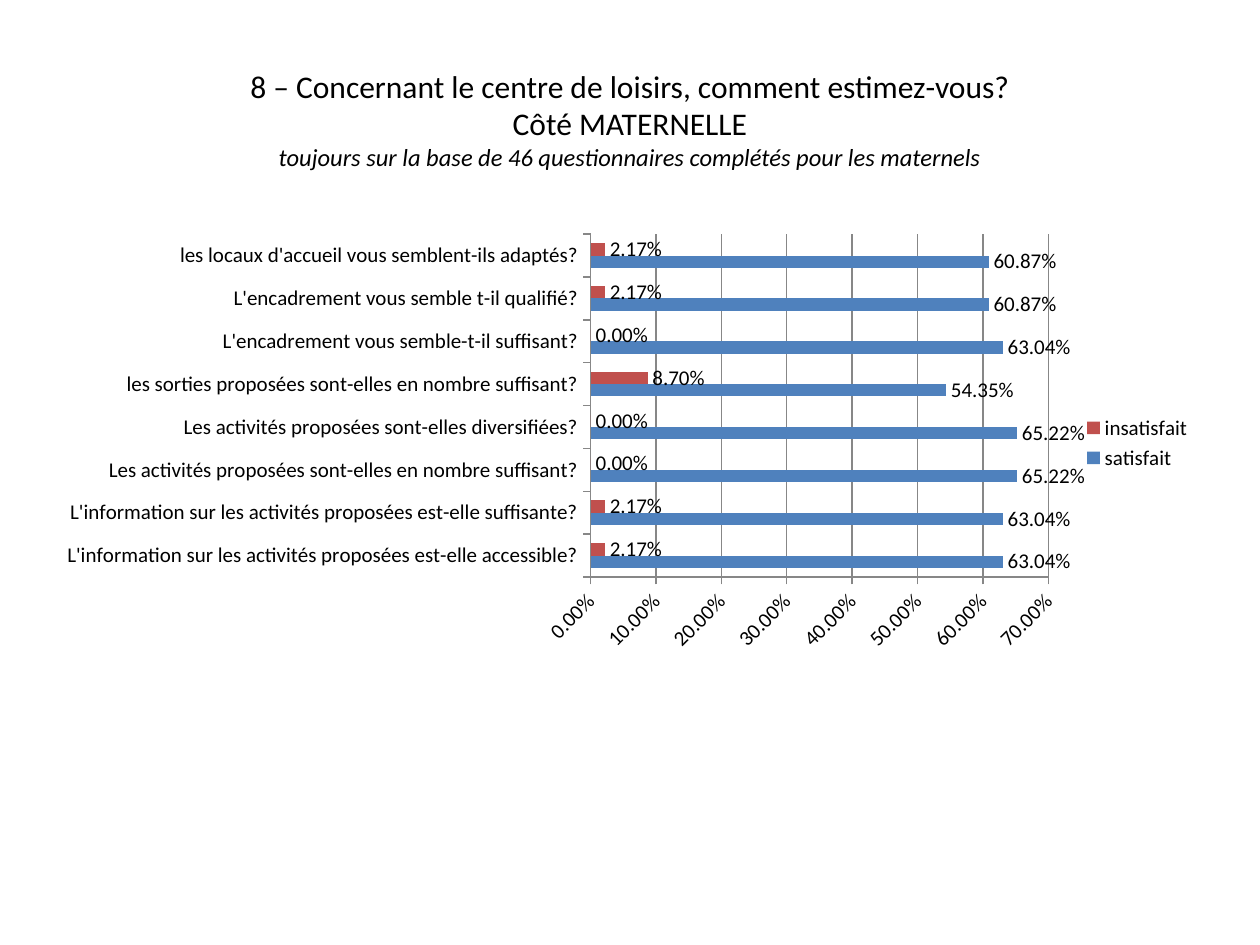
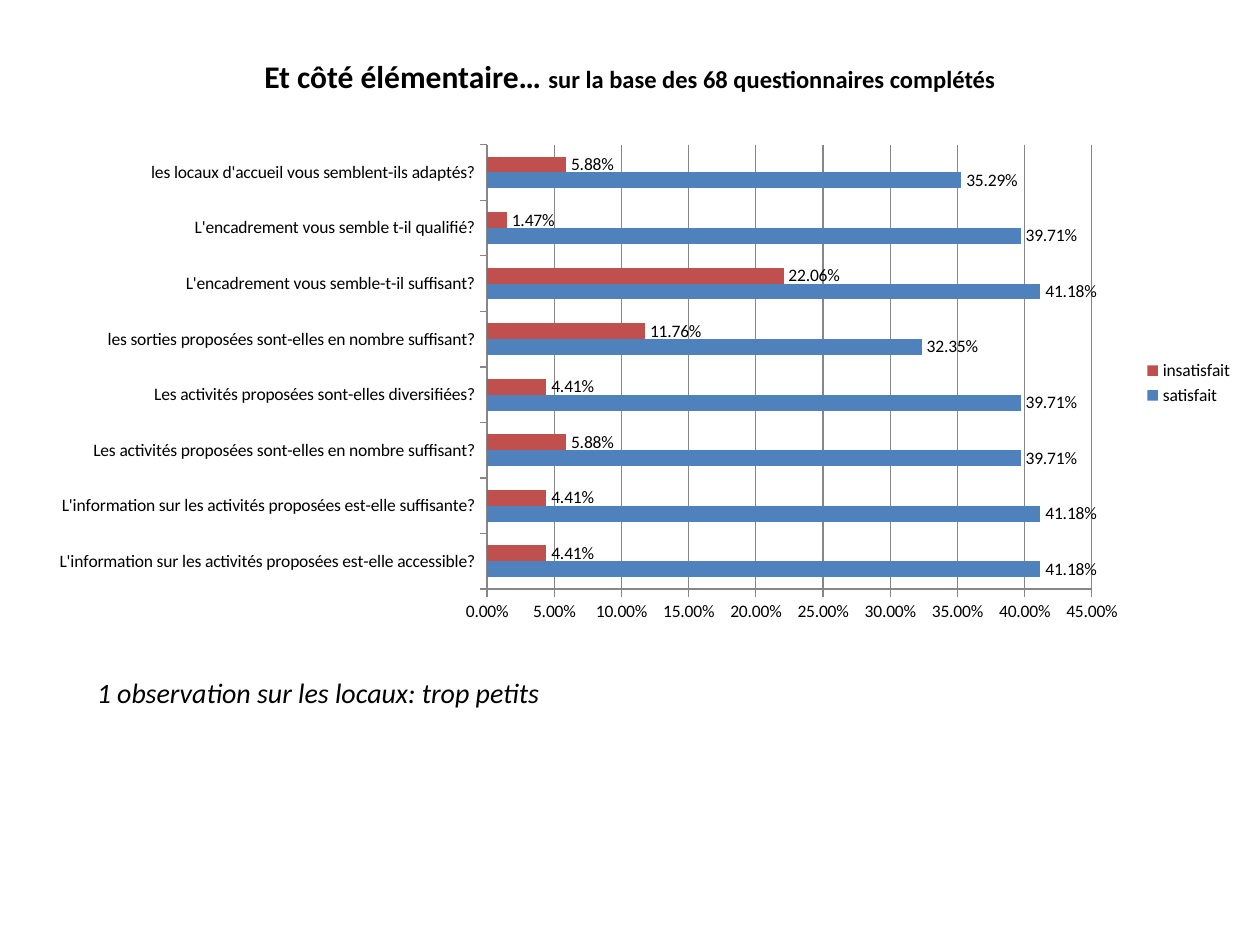
from dataclasses import dataclass
from pptx import Presentation
from pptx.chart.data import CategoryChartData as ChartData
from pptx.dml.color import RGBColor as Color
from pptx.enum.chart import XL_CHART_TYPE as Kind, XL_LABEL_POSITION as Spot
from pptx.enum.chart import XL_LEGEND_POSITION as Side, XL_TICK_MARK as Tick
from pptx.enum.text import MSO_ANCHOR as Anchor, PP_ALIGN as Align
from pptx.util import Inches, Pt


@dataclass(frozen=True)
class Theme:
    font: str = "Calibri"
    ink: Color = Color.from_string("000000")
    good: Color = Color.from_string("4F81BD")
    bad: Color = Color.from_string("C0504D")
    grid: Color = Color.from_string("878787")
    head: int = 18
    sub: int = 14
    note: int = 16


LOOK = Theme()
WIDE, HIGH = Inches(10), Inches(7.5)
RATE = "0.00%"
TOPICS = (
    "L'information sur les activités proposées est-elle accessible?",
    "L'information sur les activités proposées est-elle suffisante?",
    "Les activités proposées sont-elles en nombre suffisant?",
    "Les activités proposées sont-elles diversifiées?",
    "les sorties proposées sont-elles en nombre suffisant?",
    "L'encadrement vous semble-t-il suffisant?",
    "L'encadrement vous semble t-il qualifié?",
    "les locaux d'accueil vous semblent-ils adaptés?",
)


def place(box):
    """Turn left, top, width, height in percent of the slide into lengths."""
    return [int(share * full / 100) for share, full in zip(box, (WIDE, HIGH) * 2)]


def style(font, size, bold=None, italic=None):
    font.name, font.size, font.color.rgb = LOOK.font, Pt(size), LOOK.ink
    font.bold, font.italic = bold, italic


def add_page(deck, box, lines):
    """Add a slide whose title holds lines of (text, size, bold, italic) parts."""
    page = deck.slides.add_slide(deck.slide_layouts[5])
    title = page.shapes.title
    title.left, title.top, title.width, title.height = place(box)
    frame = title.text_frame
    frame.word_wrap, frame.vertical_anchor = True, Anchor.MIDDLE
    for row, parts in enumerate(lines):
        para = frame.add_paragraph() if row else frame.paragraphs[0]
        para.alignment = Align.CENTER
        for text, *face in parts:
            run = para.add_run()
            run.text = text
            style(run.font, *face)
    return page


def add_bars(page, box, size, good, bad, top, step):
    """Chart the satisfied and dissatisfied shares for each topic."""
    data = ChartData(number_format=RATE)
    data.categories = TOPICS
    data.add_series("satisfait", good)
    data.add_series("insatisfait", bad)
    chart = page.shapes.add_chart(Kind.BAR_CLUSTERED, *place(box), data).chart
    style(chart.font, size)
    chart.has_title = False
    chart.has_legend = True
    chart.legend.position = Side.RIGHT
    chart.legend.include_in_layout = False

    plot = chart.plots[0]
    plot.gap_width, plot.vary_by_categories = 150, False
    for series, color in zip(plot.series, (LOOK.good, LOOK.bad)):
        series.format.fill.solid()
        series.format.fill.fore_color.rgb = color
        labels = series.data_labels
        labels.show_value, labels.position = True, Spot.OUTSIDE_END
        labels.number_format, labels.number_format_is_linked = RATE, False

    scale = chart.value_axis
    scale.minimum_scale, scale.maximum_scale, scale.major_unit = 0, top, step
    scale.has_major_gridlines = True
    scale.tick_labels.number_format = RATE
    scale.tick_labels.number_format_is_linked = False
    for axis in (scale, chart.category_axis):
        axis.major_tick_mark, axis.minor_tick_mark = Tick.OUTSIDE, Tick.NONE
        axis.format.line.color.rgb = LOOK.grid
    scale.major_gridlines.format.line.color.rgb = LOOK.grid


def add_note(page, box, text):
    frame = page.shapes.add_textbox(*place(box)).text_frame
    frame.word_wrap = True
    frame.text = text
    style(frame.paragraphs[0].runs[0].font, LOOK.note, italic=True)


def nursery(deck):
    page = add_page(deck, (5, 4, 90, 17.2), [
        [("8 – Concernant le centre de loisirs, comment estimez-vous?", LOOK.head)],
        [("Côté MATERNELLE", LOOK.head)],
        [("toujours sur la base de 46 questionnaires complétés pour les maternels",
          LOOK.sub, None, True)],
    ])
    add_bars(page, (3.5, 23.87, 92.1, 46), 12,
             (.6304, .6304, .6522, .6522, .5435, .6304, .6087, .6087),
             (.0217, .0217, 0, 0, .087, 0, .0217, .0217), .7, .1)


def primary(deck):
    page = add_page(deck, (5, 4, 90, 8.13), [
        [("Et côté élémentaire… ", LOOK.head, True),
         ("sur la base des 68 questionnaires complétés", LOOK.sub, True)],
    ])
    add_bars(page, (2.8, 14.27, 96.1, 52.53), 10,
             (.4118, .4118, .3971, .3971, .3235, .4118, .3971, .3529),
             (.0441, .0441, .0588, .0441, .1176, .2206, .0147, .0588), .45, .05)
    add_note(page, (6.7, 70.8, 87.4, 8.93),
             "1 observation sur les locaux: trop petits")


def main():
    deck = Presentation()
    deck.slide_width, deck.slide_height = WIDE, HIGH
    nursery(deck)
    primary(deck)
    deck.save("out.pptx")


if __name__ == "__main__":
    main()
